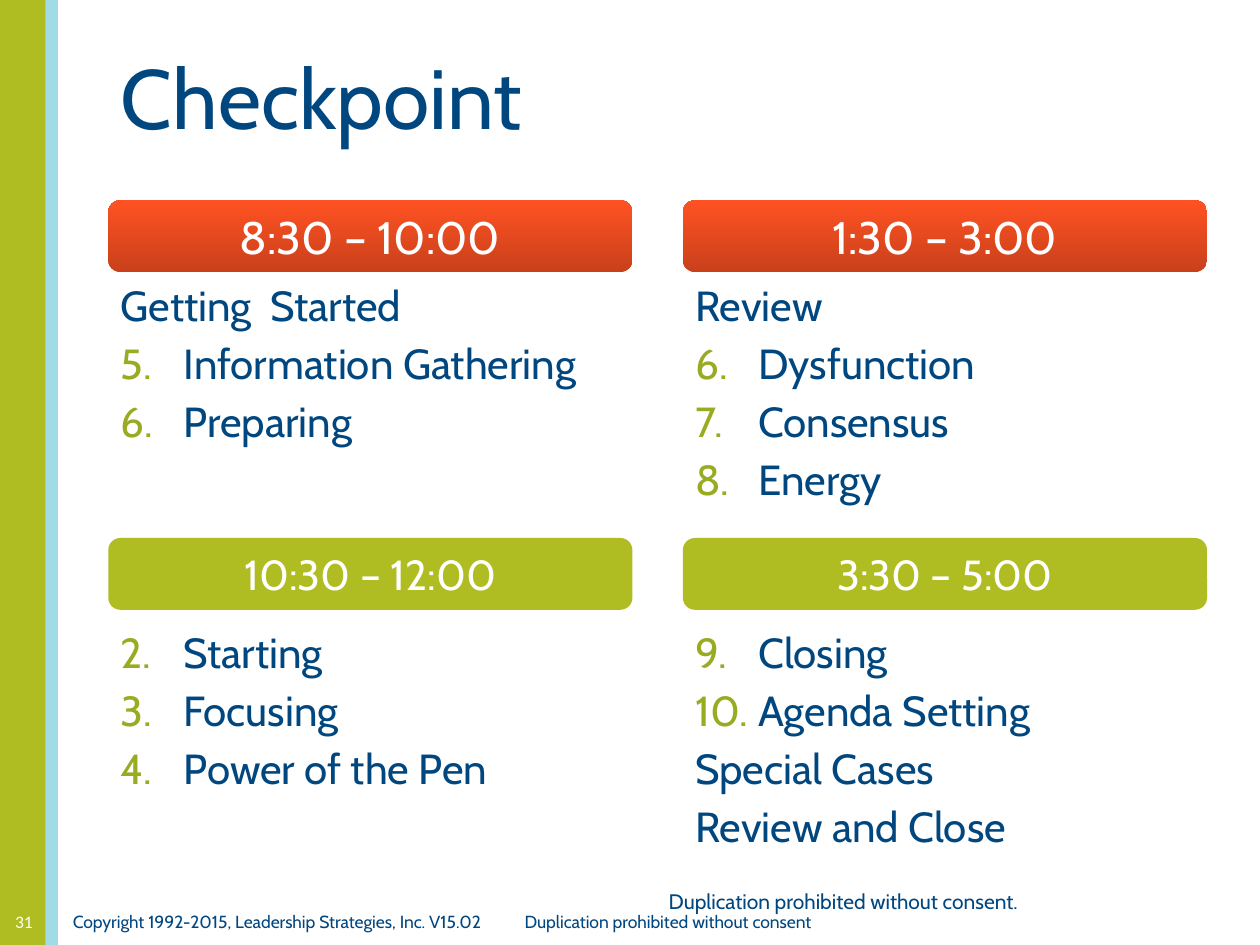
import pptx
import pptx.util
import pptx.dml.color
import pptx.enum.shapes
import pptx.enum.text
from lxml import etree

Inches, Pt = pptx.util.Inches, pptx.util.Pt
RGB = pptx.dml.color.RGBColor
SHAPE = pptx.enum.shapes.MSO_SHAPE
ALIGN = pptx.enum.text.PP_ALIGN
ANCHOR = pptx.enum.text.MSO_ANCHOR
NS = "http://schemas.openxmlformats.org/drawingml/2006/main"

NAVY = RGB(0x00, 0x46, 0x7F)
GREEN = RGB(0xAF, 0xBD, 0x22)
OLIVE = RGB(0x99, 0xAB, 0x21)
AQUA = RGB(0xA0, 0xDB, 0xE6)
RUST = RGB(0xC9, 0x40, 0x1B)
FLAME = RGB(0xFF, 0x52, 0x23)
WHITE = RGB(0xFF, 0xFF, 0xFF)

# Content: sessions by column, then row; items are (start number or None, text)
TITLE = "Checkpoint"
COLUMNS = [
    [
        ("8:30 – 10:00", [(None, "Getting  Started"),
                          (5, "Information Gathering"), (6, "Preparing")]),
        ("10:30 – 12:00", [(2, "Starting"), (3, "Focusing"),
                           (4, "Power of the Pen")]),
    ],
    [
        ("1:30 – 3:00", [(None, "Review"), (6, "Dysfunction"),
                         (7, "Consensus"), (8, "Energy")]),
        ("3:30 – 5:00", [(9, "Closing"), (10, "Agenda Setting"),
                         (None, "Special Cases"),
                         (None, "Review and Close")]),
    ],
]
# Text, box, size, alignment, anchor, wrap, font, colour
NOTES = [
    ("Duplication prohibited without consent.", (4.58, 6.95, 4.23, 0.4),
     12, ALIGN.CENTER, ANCHOR.MIDDLE, True, "Cabin", NAVY),
    ("Copyright 1992-2015, Leadership Strategies, Inc. V15.02",
     (0.48, 7.18, 3.6, 0.27),
     10, ALIGN.LEFT, ANCHOR.TOP, False, "Cabin", NAVY),
    ("Duplication prohibited without consent", (4.06, 7.18, 2.48, 0.27),
     10, ALIGN.CENTER, ANCHOR.TOP, False, "Cabin", NAVY),
    ("31", (0, 7.05, 0.38, 0.4),
     10, ALIGN.CENTER, ANCHOR.BOTTOM, True, "Calibri", WHITE),
]
BARS = [((0, 0, 0.38, 7.5), GREEN), ((0.36, 0, 0.1, 7.5), AQUA)]

# Grid
LEFT, WIDE, STEP = 0.86, 4.16, 4.56
HEAD, LIST = 0.57, 2.24
ROWS = [(1.59, 2.17, 26), (4.27, 4.92, 24)]  # header top, list top, size


def place(box):
    return [Inches(n) for n in box]


def style(par, size, color, font="Cabin", align=ALIGN.LEFT):
    par.alignment = align
    for run in par.runs:
        run.font.size = Pt(size)
        run.font.name = font
        run.font.color.rgb = color


def block(slide, kind, box):
    shape = slide.shapes.add_shape(kind, *place(box))
    shape.shadow.inherit = False
    shape.line.fill.background()
    return shape


def paint(shape, color):
    shape.fill.solid()
    shape.fill.fore_color.rgb = color


def number(par, start):
    props = par._p.get_or_add_pPr()
    props.set("marL", str(Inches(0.5)))
    props.set("indent", str(Inches(-0.5)))
    tint = etree.SubElement(props, f"{{{NS}}}buClr")
    etree.SubElement(tint, f"{{{NS}}}srgbClr", val=str(OLIVE))
    etree.SubElement(props, f"{{{NS}}}buAutoNum",
                     type="arabicPeriod", startAt=str(start))


def header(slide, text, box, size, row):
    shape = block(slide, SHAPE.ROUNDED_RECTANGLE, box)
    if row == 0:
        shape.fill.gradient()
        shape.fill.gradient_angle = 90
        for stop, color in zip(shape.fill.gradient_stops, (RUST, FLAME)):
            stop.color.rgb = color
    else:
        paint(shape, GREEN)
    frame = shape.text_frame
    frame.text = text
    frame.vertical_anchor = ANCHOR.MIDDLE
    style(frame.paragraphs[0], size, WHITE, align=ALIGN.CENTER)


def topics(slide, items, box):
    frame = slide.shapes.add_textbox(*place(box)).text_frame
    frame.word_wrap = True
    for i, (start, text) in enumerate(items):
        par = frame.add_paragraph() if i else frame.paragraphs[0]
        par.text = text
        if i:
            par.space_before = Pt(4.4)
        if start:
            number(par, start)
        style(par, 24, NAVY)


def main():
    deck = pptx.Presentation()
    deck.slide_width, deck.slide_height = Inches(10), Inches(7.5)
    slide = deck.slides.add_slide(deck.slide_layouts[5])

    # Side bars
    for box, color in BARS:
        paint(block(slide, SHAPE.RECTANGLE, box), color)

    # Title
    title = slide.shapes.title
    title.left, title.top, title.width, title.height = place(
        (LEFT, 0.14, 8.83, 1.25))
    title.text_frame.text = TITLE
    title.text_frame.vertical_anchor = ANCHOR.MIDDLE
    style(title.text_frame.paragraphs[0], 48, NAVY)

    # Sessions
    for col, sessions in enumerate(COLUMNS):
        x = LEFT + col * STEP
        for row, (time, items) in enumerate(sessions):
            top, below, size = ROWS[row]
            header(slide, time, (x, top, WIDE, HEAD), size, row)
            topics(slide, items, (x, below, WIDE, LIST))

    # Footer notes and page number
    for text, box, size, align, anchor, wrap, font, color in NOTES:
        frame = slide.shapes.add_textbox(*place(box)).text_frame
        frame.text = text
        frame.word_wrap = wrap
        frame.vertical_anchor = anchor
        style(frame.paragraphs[0], size, color, font, align)

    deck.save("out.pptx")


if __name__ == "__main__":
    main()
